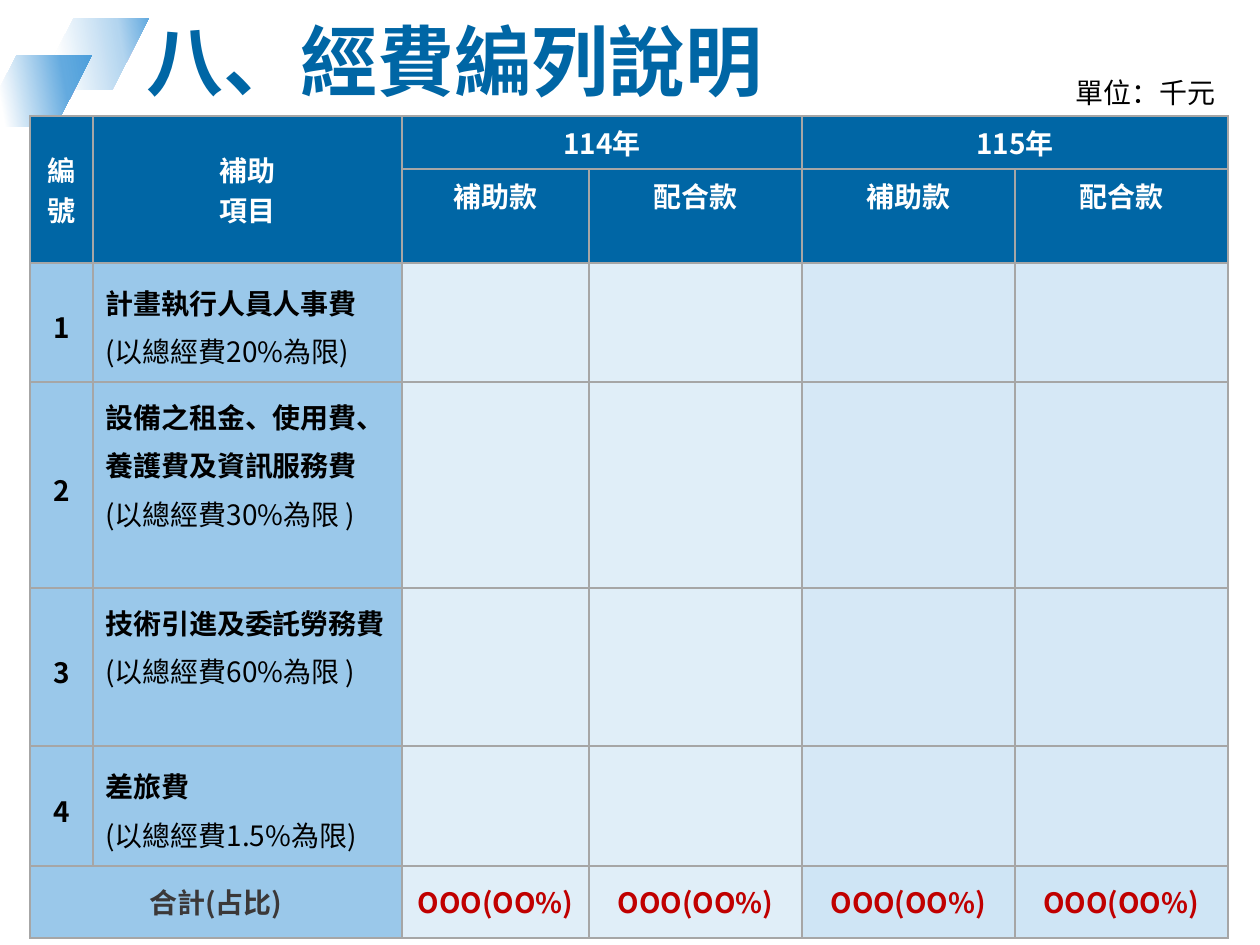
from lxml import etree
from pptx import Presentation
from pptx import util as u
from pptx.dml.color import RGBColor
from pptx.enum import shapes, text
from pptx.oxml import parse_xml
from pptx.oxml.ns import nsdecls, qn

PX = 914400 // 126
FONT = "Noto Sans CJK SC"
BLUE, SKY, PALE, MIST, TOTAL = "0066A5", "9AC8EA", "E0EEF8", "D6E8F6", "CFE5F5"
WHITE, BLACK, GRAY, RED, GRID = "FFFFFF", "000000", "3B3838", "C00000", "A6A6A6"

# Content
TITLE = "八、經費編列說明"
UNIT = "單位：千元"
YEARS = ["114年", "115年"]
FUNDS = ["補助款", "配合款"]
ITEMS = [  # name, limit, anchor
    ("計畫執行人員人事費", "(以總經費20%為限)", "MIDDLE"),
    ("設備之租金、使用費、養護費及資訊服務費", "(以總經費30%為限\u00a0)", "TOP"),
    ("技術引進及委託勞務費", "(以總經費60%為限\u00a0)", "TOP"),
    ("差旅費", "(以總經費1.5%為限)", "MIDDLE"),
]
SUM_LABEL, SUM_VALUE = "合計(占比)", "OOO(OO%)"
COLS = [63, 309, 187, 213, 213, 213]
ROWS = [53, 94, 119, 206, 158, 120, 72]
ORNAMENTS = [  # left, top, gradient stops
    (37, 18, [(0, "F6F8FC"), (20, "FFFFFF"), (74, "B3D5EF"), (100, "63AADF")]),
    (-20, 55, [(0, "F6F8FC"), (20, "FFFFFF"), (75, "63AADF"), (100, "4D9FDB")]),
]


def px(n):
    return u.Emu(n * PX)


def rgb(color):
    return RGBColor.from_string(color)


def write(tf, *lines, size=16, color=BLACK, bold=(False,), align="LEFT", spacing=None):
    """One paragraph per line; bold holds one flag per line."""
    tf.word_wrap = True
    for i, line in enumerate(lines):
        p = tf.paragraphs[0] if i == 0 else tf.add_paragraph()
        p.alignment = getattr(text.PP_ALIGN, align)
        if spacing:
            p.line_spacing = spacing
        for j, part in enumerate(line.split("\n")):
            if j:
                p.add_line_break()
            r = p.add_run()
            r.text = part
            f = r.font
            f.size, f.bold, f.name = u.Pt(size), bold[i], FONT
            f.color.rgb = rgb(color)
            etree.SubElement(r._r.get_or_add_rPr(), qn("a:ea"), typeface=FONT)


def fill_cell(cell, fill, *lines, anchor="MIDDLE", **fmt):
    for side in ("L", "R", "T", "B"):
        cell._tc.get_or_add_tcPr().append(parse_xml(
            f'<a:ln{side} {nsdecls("a")} w="12700"><a:solidFill>'
            f'<a:srgbClr val="{GRID}"/></a:solidFill></a:ln{side}>'))
    cell.fill.solid()
    cell.fill.fore_color.rgb = rgb(fill)
    cell.vertical_anchor = getattr(text.MSO_ANCHOR, anchor)
    write(cell.text_frame, *lines, **fmt)


prs = Presentation()
prs.slide_width, prs.slide_height = px(1260), px(945)
s = prs.slides.add_slide(prs.slide_layouts[6])

# Corner ornaments
for left, top, stops in ORNAMENTS:
    sp = s.shapes.add_shape(shapes.MSO_SHAPE.PARALLELOGRAM, px(left), px(top), px(112), px(72))
    sp.adjustments[0] = 0.51
    sp.shadow.inherit = False
    sp.line.fill.background()
    sp.fill.gradient()
    sp.fill.gradient_angle = 10
    gs = sp._element.spPr.find(qn("a:gradFill")).find(qn("a:gsLst"))
    for old in list(gs):
        gs.remove(old)
    for pos, color in stops:
        stop = etree.SubElement(gs, qn("a:gs"), pos=str(pos * 1000))
        etree.SubElement(stop, qn("a:srgbClr"), val=color)

# Title and unit
tf = s.shapes.add_textbox(px(134), px(18), px(1108), px(140)).text_frame
write(tf, TITLE, size=44, color=BLUE, bold=[True], spacing=0.9)
tf = s.shapes.add_textbox(px(1014), px(69), px(214), px(47)).text_frame
write(tf, UNIT, align="RIGHT")

# Budget table
table = s.shapes.add_table(len(ROWS), len(COLS), px(30), px(116),
                           px(sum(COLS)), px(sum(ROWS))).table
for col, w in zip(table.columns, COLS):
    col.width = px(w)
for row, h in zip(table.rows, ROWS):
    row.height = px(h)
cell = table.cell
last = len(ROWS) - 1

for r1, c1, r2, c2 in [(0, 0, 1, 0), (0, 1, 1, 1), (0, 2, 0, 3), (0, 4, 0, 5), (last, 0, last, 1)]:
    cell(r1, c1).merge(cell(r2, c2))

# Header rows
head = dict(color=WHITE, bold=[True], align="CENTER")
for c, label in enumerate(["編號", "補助\n項目"]):
    fill_cell(cell(0, c), BLUE, label, **head)
    fill_cell(cell(1, c), BLUE)
for c in range(2, 6):
    year, fund = divmod(c - 2, 2)
    fill_cell(cell(0, c), BLUE, *([] if fund else [YEARS[year]]), anchor="TOP", **head)
    fill_cell(cell(1, c), BLUE, FUNDS[fund], anchor="TOP", **head)

# Item rows
for n, (name, limit, anchor) in enumerate(ITEMS, 1):
    fill_cell(cell(n + 1, 0), SKY, str(n), bold=[True], align="CENTER", spacing=1.2)
    fill_cell(cell(n + 1, 1), SKY, name, limit, anchor=anchor, bold=[True, False], spacing=1.2)
    for c in range(2, 6):
        fill_cell(cell(n + 1, c), PALE if c < 4 else MIST)

# Total row
fill_cell(cell(last, 0), SKY, SUM_LABEL, color=GRAY, bold=[True], align="CENTER")
fill_cell(cell(last, 1), SKY)
for c in range(2, 6):
    fill_cell(cell(last, c), PALE if c < 4 else TOTAL, SUM_VALUE,
              color=RED, bold=[True], align="CENTER")

prs.save("out.pptx")
